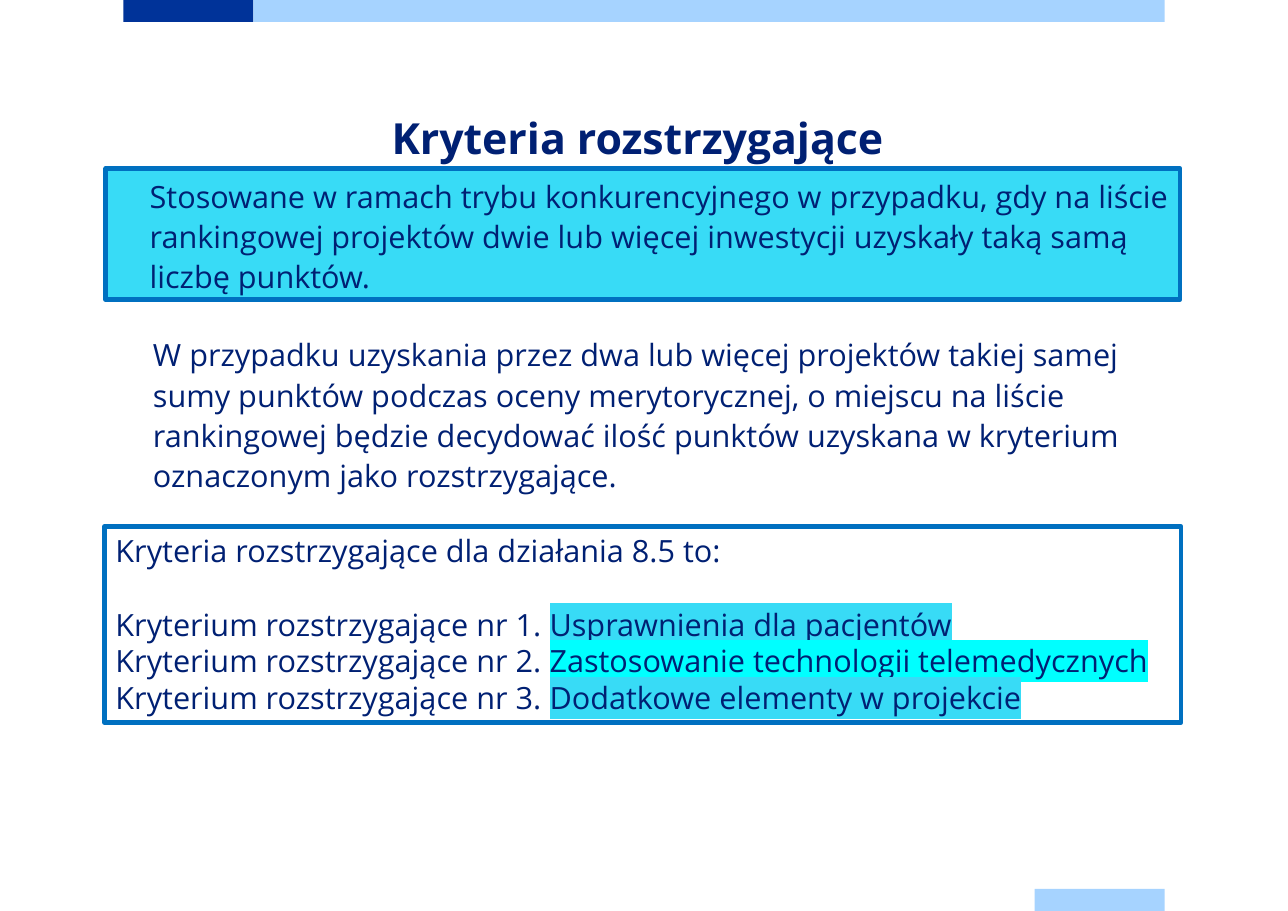
from dataclasses import dataclass
from typing import Optional

from lxml.etree import SubElement
from pptx import Presentation
from pptx.dml.color import RGBColor
from pptx.enum.shapes import MSO_SHAPE
from pptx.enum.text import MSO_ANCHOR, MSO_AUTO_SIZE, PP_ALIGN
from pptx.oxml.ns import qn
from pptx.util import Inches, Pt


@dataclass(frozen=True)
class Theme:
    font: str = "Open Sans"
    text: str = "002073"
    navy: str = "003399"
    sky: str = "A6D3FF"
    cyan: str = "38DBF6"
    aqua: str = "00FFFF"
    border: str = "0070C0"
    title_size: int = 28
    body_size: int = 20


@dataclass(frozen=True)
class Box:
    left: float
    top: float
    width: float
    height: float
    fill: Optional[str] = None
    line: Optional[str] = None


@dataclass(frozen=True)
class Criterion:
    name: str
    highlight: str


THEME = Theme()

BARS = [
    Box(1.12, 0, 1.18, 0.2, THEME.navy),
    Box(2.3, 0, 8.27, 0.2, THEME.sky),
    Box(9.39, 8.07, 1.18, 0.2, THEME.sky),
]
TITLE = Box(0.98, 0.98, 9.61, 1.18)
USAGE = Box(0.96, 1.53, 9.75, 1.19, THEME.cyan, THEME.border)
RULE = Box(0.99, 2.97, 9.73, 1.56)
CRITERIA_BOX = Box(0.95, 4.78, 9.77, 1.78, None, THEME.border)

CRITERIA = [
    Criterion("Usprawnienia dla pacjentów", THEME.cyan),
    Criterion("Zastosowanie technologii telemedycznych", THEME.aqua),
    Criterion("Dodatkowe elementy w projekcie", THEME.cyan),
]


def place(box: Box) -> tuple:
    return tuple(Inches(v) for v in (box.left, box.top, box.width, box.height))


def add_box(slide, box: Box):
    sp = slide.shapes.add_shape(MSO_SHAPE.RECTANGLE, *place(box))
    sp.shadow.inherit = False
    if box.fill:
        sp.fill.solid()
        sp.fill.fore_color.rgb = RGBColor.from_string(box.fill)
    else:
        sp.fill.background()
    if box.line:
        sp.line.color.rgb = RGBColor.from_string(box.line)
        sp.line.width = Pt(3)
    else:
        sp.line.fill.background()
    return sp


def text_frame(sp):
    tf = sp.text_frame
    tf.word_wrap = True
    tf.auto_size = MSO_AUTO_SIZE.NONE
    tf.vertical_anchor = MSO_ANCHOR.TOP
    return tf


def add_text(p, text: str, *, size: int = THEME.body_size, bold: bool = False,
             highlight: Optional[str] = None, align=PP_ALIGN.LEFT,
             spacing=None, indent: float = 0) -> None:
    p.alignment = align
    if spacing:
        p.line_spacing = spacing
    if indent:
        p._p.get_or_add_pPr().set("marL", str(Inches(indent)))
    r = p.add_run()
    r.text = text
    r.font.name = THEME.font
    r.font.size = Pt(size)
    r.font.bold = bold
    r.font.color.rgb = RGBColor.from_string(THEME.text)
    if highlight:
        rPr = r._r.get_or_add_rPr()
        mark = SubElement(rPr, qn("a:highlight"))
        SubElement(mark, qn("a:srgbClr"), val=highlight)
        rPr.find(qn("a:solidFill")).addnext(mark)


def add_title(slide) -> None:
    sp = slide.shapes.title
    sp.left, sp.top, sp.width, sp.height = place(TITLE)
    tf = text_frame(sp)
    tf.margin_left = tf.margin_top = tf.margin_right = tf.margin_bottom = 0
    add_text(tf.paragraphs[0], "Kryteria rozstrzygające", size=THEME.title_size,
             bold=True, align=PP_ALIGN.CENTER, spacing=Pt(36))


def add_criteria(slide) -> None:
    tf = text_frame(add_box(slide, CRITERIA_BOX))
    add_text(tf.paragraphs[0], "Kryteria rozstrzygające dla działania 8.5 to:")
    for number, criterion in enumerate(CRITERIA, 1):
        p = tf.add_paragraph()
        if number == 1:
            p.space_before = Pt(24)
        add_text(p, f"Kryterium rozstrzygające nr {number}. ")
        add_text(p, criterion.name, highlight=criterion.highlight)


def main() -> None:
    prs = Presentation()
    prs.slide_width, prs.slide_height = Inches(11.69), Inches(8.27)
    slide = prs.slides.add_slide(prs.slide_layouts[5])
    for bar in BARS:
        add_box(slide, bar)
    add_title(slide)

    usage = text_frame(add_box(slide, USAGE))
    add_text(usage.paragraphs[0],
             "Stosowane w ramach trybu konkurencyjnego w przypadku, gdy na liście "
             "rankingowej projektów dwie lub więcej inwestycji uzyskały taką samą "
             "liczbę punktów.", spacing=1.1, indent=0.3)

    add_criteria(slide)

    rule = text_frame(slide.shapes.add_textbox(*place(RULE)))
    add_text(rule.paragraphs[0],
             "W przypadku uzyskania przez dwa lub więcej projektów takiej samej "
             "sumy punktów podczas oceny merytorycznej, o miejscu na liście "
             "rankingowej będzie decydować ilość punktów uzyskana w kryterium "
             "oznaczonym jako rozstrzygające.", spacing=1.1, indent=0.3)
    prs.save("out.pptx")


if __name__ == "__main__":
    main()
